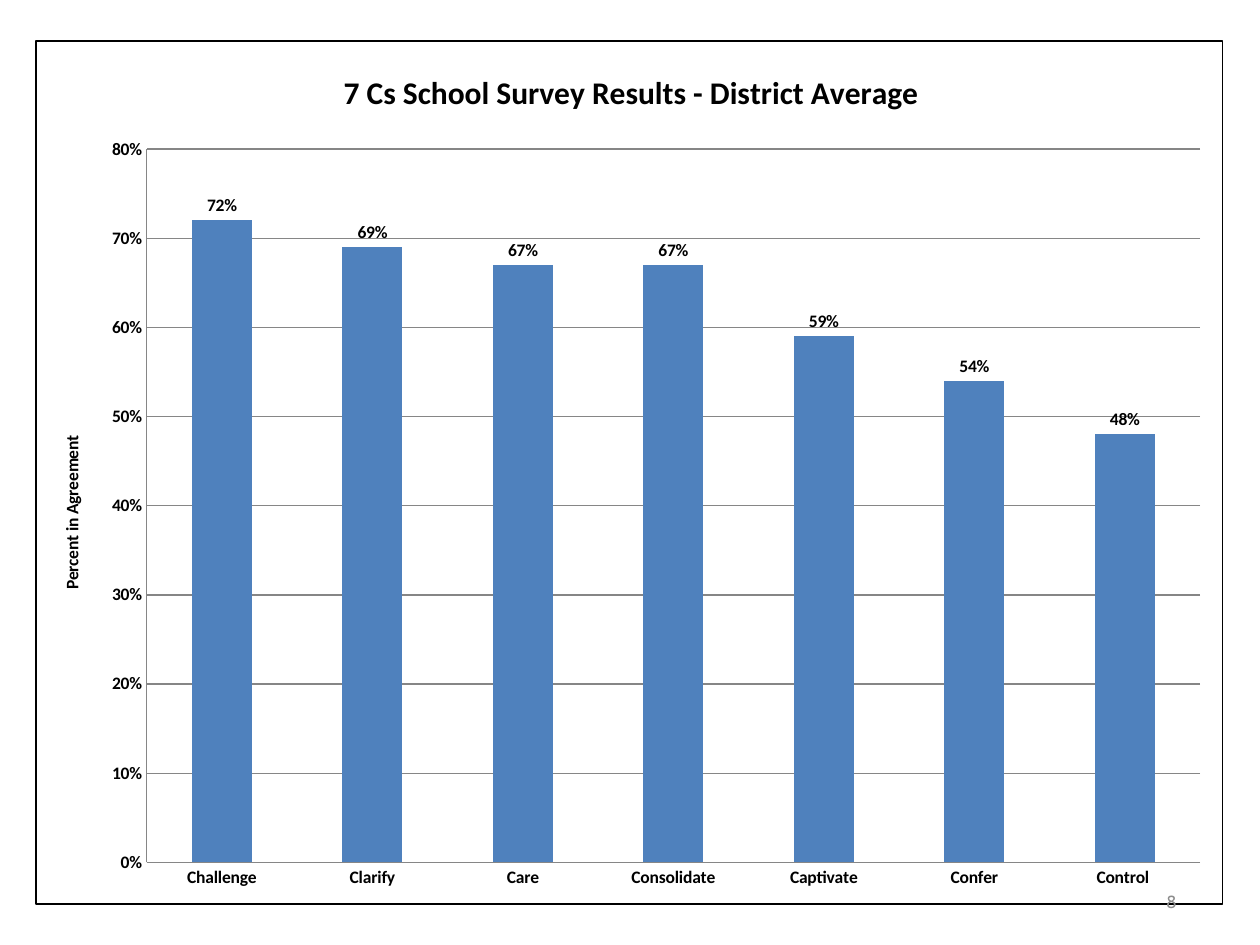
from lxml import etree
from pptx import Presentation
from pptx.chart.data import CategoryChartData
from pptx.dml.color import RGBColor
from pptx.enum.chart import XL_CHART_TYPE, XL_LABEL_POSITION, XL_TICK_MARK
from pptx.enum.text import MSO_ANCHOR, PP_ALIGN
from pptx.oxml import parse_xml
from pptx.oxml.ns import nsdecls, qn
from pptx.util import Inches, Pt

COLUMNS = XL_CHART_TYPE.COLUMN_CLUSTERED
OUTSIDE_END = XL_LABEL_POSITION.OUTSIDE_END
NO_TICKS = XL_TICK_MARK.NONE
BOTTOM = MSO_ANCHOR.BOTTOM
RIGHT = PP_ALIGN.RIGHT

SURVEY_TITLE = "7 Cs School Survey Results - District Average"
AGREEMENT_TITLE = "Percent in Agreement"
AGREEMENT = {
    "Challenge": 0.72,
    "Clarify": 0.69,
    "Care": 0.67,
    "Consolidate": 0.67,
    "Captivate": 0.59,
    "Confer": 0.54,
    "Control ": 0.48,
}
PAGE_NUMBER = "8"
PERCENT = "0%"

CHART_WIDTH = Inches(9.43)
CHART_HEIGHT = Inches(6.86)

THEME = {
    "font": "Calibri",
    "page_font": "Cabin",
    "title_size": Pt(18),
    "text_size": Pt(10),
    "line_width": Pt(0.75),
    "text": RGBColor.from_string("000000"),
    "background": RGBColor.from_string("FFFFFF"),
    "bar": RGBColor.from_string("4F81BD"),
    "grid": RGBColor.from_string("868686"),
    "page": RGBColor.from_string("8C8C8C"),
}


def style_font(font, size, name=THEME["font"], color=THEME["text"], bold=True):
    font.name = name
    font.size = size
    font.bold = bold
    font.color.rgb = color


def style_line(line):
    line.color.rgb = THEME["grid"]
    line.width = THEME["line_width"]


def set_layout(element, index, **lengths):
    for old_layout in element.findall(qn("c:layout")):
        element.remove(old_layout)
    layout = etree.Element(qn("c:layout"))
    manual = etree.SubElement(layout, qn("c:manualLayout"))
    if "w" in lengths:
        etree.SubElement(manual, qn("c:layoutTarget"), val="inner")
    for key in ("x", "y"):
        etree.SubElement(manual, qn(f"c:{key}Mode"), val="edge")
    for key, length in lengths.items():
        whole = CHART_WIDTH if key in ("x", "w") else CHART_HEIGHT
        etree.SubElement(manual, qn(f"c:{key}"), val=str(length / whole))
    element.insert(index, layout)


def write_title(title, wording, size, x, y):
    run = title.text_frame.paragraphs[0].add_run()
    run.text = wording
    style_font(run.font, size)
    set_layout(title._element, 1, x=x, y=y)


def add_survey_chart(slide):
    survey = CategoryChartData(number_format=PERCENT)
    survey.categories = list(AGREEMENT)
    survey.add_series("Series 1", list(AGREEMENT.values()))
    chart = slide.shapes.add_chart(
        COLUMNS, Inches(0.28), Inches(0.32), CHART_WIDTH, CHART_HEIGHT, survey
    ).chart
    style_font(chart.font, THEME["text_size"])
    chart.has_legend = False
    chart.has_title = True
    write_title(
        chart.chart_title, SURVEY_TITLE, THEME["title_size"], Inches(2.4), Inches(0.19)
    )
    chart.chart_title.include_in_layout = False

    chart_area = chart._chartSpace.chart
    set_layout(
        chart_area.plotArea, 0,
        x=Inches(0.88), y=Inches(0.86), w=Inches(8.37), h=Inches(5.67),
    )
    border = parse_xml(
        f'<c:spPr {nsdecls("c", "a")}><a:solidFill>'
        f'<a:srgbClr val="{THEME["background"]}"/></a:solidFill>'
        f'<a:ln w="{THEME["line_width"]}"><a:solidFill>'
        f'<a:srgbClr val="{THEME["text"]}"/></a:solidFill></a:ln></c:spPr>'
    )
    chart_area.addnext(border)

    for axis in (chart.category_axis, chart.value_axis):
        axis.major_tick_mark = NO_TICKS
        axis.minor_tick_mark = NO_TICKS
        style_line(axis.format.line)
        style_font(axis.tick_labels.font, THEME["text_size"])

    percent_axis = chart.value_axis
    percent_axis.minimum_scale = 0
    percent_axis.maximum_scale = 0.8
    percent_axis.major_unit = 0.1
    percent_axis.has_major_gridlines = True
    style_line(percent_axis.major_gridlines.format.line)
    percent_axis.tick_labels.number_format = PERCENT
    percent_axis.tick_labels.number_format_is_linked = False
    percent_axis.has_title = True
    write_title(
        percent_axis.axis_title, AGREEMENT_TITLE, THEME["text_size"],
        Inches(0.17), Inches(3.11),
    )
    body = percent_axis.axis_title.text_frame._txBody.bodyPr
    body.set("rot", "-5400000")
    body.set("vert", "horz")

    bars = chart.plots[0]
    bars.gap_width = 150
    bars.vary_by_categories = False
    fill = bars.series[0].format.fill
    fill.solid()
    fill.fore_color.rgb = THEME["bar"]
    bars.has_data_labels = True
    labels = bars.data_labels
    labels.show_value = True
    labels.number_format = PERCENT
    labels.number_format_is_linked = False
    labels.position = OUTSIDE_END
    style_font(labels.font, THEME["text_size"])


def add_page_number(slide):
    frame = slide.shapes.add_textbox(
        Inches(7.01), Inches(6.84), Inches(2.33), Inches(0.4)
    ).text_frame
    frame.word_wrap = True
    frame.vertical_anchor = BOTTOM
    frame.margin_left = frame.margin_right = frame.margin_top = frame.margin_bottom = 0
    paragraph = frame.paragraphs[0]
    paragraph.alignment = RIGHT
    run = paragraph.add_run()
    run.text = PAGE_NUMBER
    style_font(run.font, THEME["text_size"], THEME["page_font"], THEME["page"], False)


def main():
    deck = Presentation()
    deck.slide_width = Inches(10)
    deck.slide_height = Inches(7.5)
    slide = deck.slides.add_slide(deck.slide_layouts[6])
    add_survey_chart(slide)
    add_page_number(slide)
    deck.save("out.pptx")


if __name__ == "__main__":
    main()
